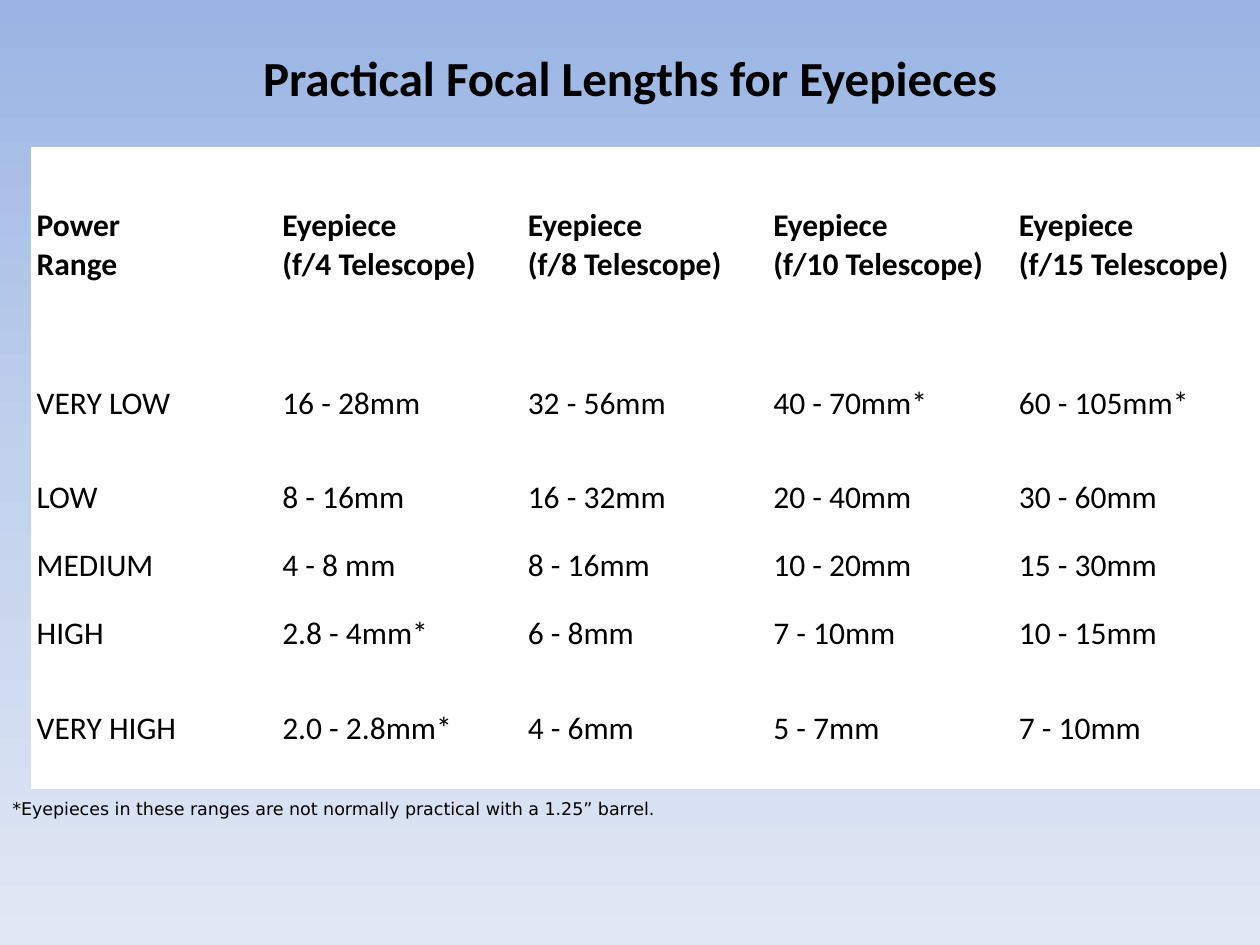
from copy import deepcopy
from typing import NamedTuple

from pptx import Presentation
from pptx.dml.color import RGBColor
from pptx.enum.text import MSO_ANCHOR, MSO_AUTO_SIZE, PP_ALIGN
from pptx.oxml.ns import qn
from pptx.util import Cm, Pt

MIDDLE, TOP = MSO_ANCHOR.MIDDLE, MSO_ANCHOR.TOP
LEFT, CENTER = PP_ALIGN.LEFT, PP_ALIGN.CENTER
FIT_SHAPE = MSO_AUTO_SIZE.SHAPE_TO_FIT_TEXT

COLORS = {
    "sky_top": "9AB5E4",
    "sky_middle": "C2D1ED",
    "sky_bottom": "E1E8F5",
    "cell": "FFFFFF",
    "text": "000000",
}


class PowerRange(NamedTuple):
    name: str
    eyepieces: tuple[str, ...]  # one per focal ratio
    height: float  # cm


class Caption(NamedTuple):
    text: str
    left: float
    top: float
    width: float
    height: float
    font: str
    size: int
    bold: bool
    align: PP_ALIGN
    anchor: MSO_ANCHOR
    wrap: bool


FOCAL_RATIOS = (4, 8, 10, 15)
HEADER_HEIGHT = 3.94
COLUMN_WIDTH = 4.95
CELL_MARGIN = Cm(0.1)

POWER_RANGES = [
    PowerRange("VERY LOW", ("16 - 28mm", "32 - 56mm", "40 - 70mm*", "60 - 105mm*"), 2.44),
    PowerRange("LOW", ("8 - 16mm", "16 - 32mm", "20 - 40mm", "30 - 60mm"), 1.37),
    PowerRange("MEDIUM", ("4 - 8 mm", "8 - 16mm", "10 - 20mm", "15 - 30mm"), 1.37),
    PowerRange("HIGH", ("2.8 - 4mm*", "6 - 8mm", "7 - 10mm", "10 - 15mm"), 1.37),
    PowerRange("VERY HIGH", ("2.0 - 2.8mm*", "4 - 6mm", "5 - 7mm", "7 - 10mm"), 2.44),
]

FOOTNOTE = Caption(
    "*Eyepieces in these ranges are not normally practical with a 1.25” barrel.",
    0, 15.95, 13.77, 0.69, "DejaVu Sans", 10, False, LEFT, MIDDLE, False,
)
TITLE = Caption(
    "Practical Focal Lengths for Eyepieces",
    4.45, 0.84, 16.5, 1.45, "Calibri", 28, True, CENTER, TOP, True,
)


def rgb(name: str) -> RGBColor:
    return RGBColor.from_string(COLORS[name])


def format_text(text_frame, font: str, size: int, bold: bool) -> None:
    for paragraph in text_frame.paragraphs:
        for run in paragraph.runs:
            run.font.name = font
            run.font.size = Pt(size)
            run.font.bold = bold
            run.font.color.rgb = rgb("text")


def paint_background(slide) -> None:
    """Fill the background with a three-stop gradient running downwards."""
    fill = slide.background.fill
    fill.gradient()
    fill.gradient_angle = 270
    stop_list = slide.element.find(".//" + qn("a:gsLst"))
    stop_list.insert(1, deepcopy(stop_list[0]))
    sky = ("sky_top", "sky_middle", "sky_bottom")
    for index, (stop, color) in enumerate(zip(fill.gradient_stops, sky)):
        stop.position = index / 2
        stop.color.rgb = rgb(color)


def add_eyepiece_table(slide) -> None:
    header = ["Power\vRange"] + [f"Eyepiece\v(f/{ratio} Telescope)" for ratio in FOCAL_RATIOS]
    rows = [header] + [[power.name, *power.eyepieces] for power in POWER_RANGES]
    heights = [HEADER_HEIGHT] + [power.height for power in POWER_RANGES]

    table = slide.shapes.add_table(
        len(rows), len(header), Cm(0.64), Cm(2.97),
        Cm(COLUMN_WIDTH * len(header)), Cm(sum(heights)),
    ).table
    table.first_row = False
    table.horz_banding = False
    for column in table.columns:
        column.width = Cm(COLUMN_WIDTH)

    for row_index, (texts, height) in enumerate(zip(rows, heights)):
        table.rows[row_index].height = Cm(height)
        for cell, text in zip(table.rows[row_index].cells, texts):
            cell.fill.solid()
            cell.fill.fore_color.rgb = rgb("cell")
            cell.vertical_anchor = MIDDLE
            cell.margin_left = cell.margin_right = CELL_MARGIN
            cell.margin_top = cell.margin_bottom = CELL_MARGIN
            cell.text_frame.text = text
            format_text(cell.text_frame, "Calibri", 18, bold=row_index == 0)


def add_caption(slide, caption: Caption) -> None:
    text_frame = slide.shapes.add_textbox(
        Cm(caption.left), Cm(caption.top), Cm(caption.width), Cm(caption.height)
    ).text_frame
    text_frame.word_wrap = caption.wrap
    text_frame.auto_size = FIT_SHAPE
    text_frame.vertical_anchor = caption.anchor
    text_frame.text = caption.text
    text_frame.paragraphs[0].alignment = caption.align
    format_text(text_frame, caption.font, caption.size, caption.bold)


def main() -> None:
    presentation = Presentation()
    presentation.slide_width = Cm(25.4)
    presentation.slide_height = Cm(19.05)
    slide = presentation.slides.add_slide(presentation.slide_layouts[6])
    paint_background(slide)
    add_eyepiece_table(slide)
    for caption in (FOOTNOTE, TITLE):
        add_caption(slide, caption)
    presentation.save("out.pptx")


if __name__ == "__main__":
    main()
